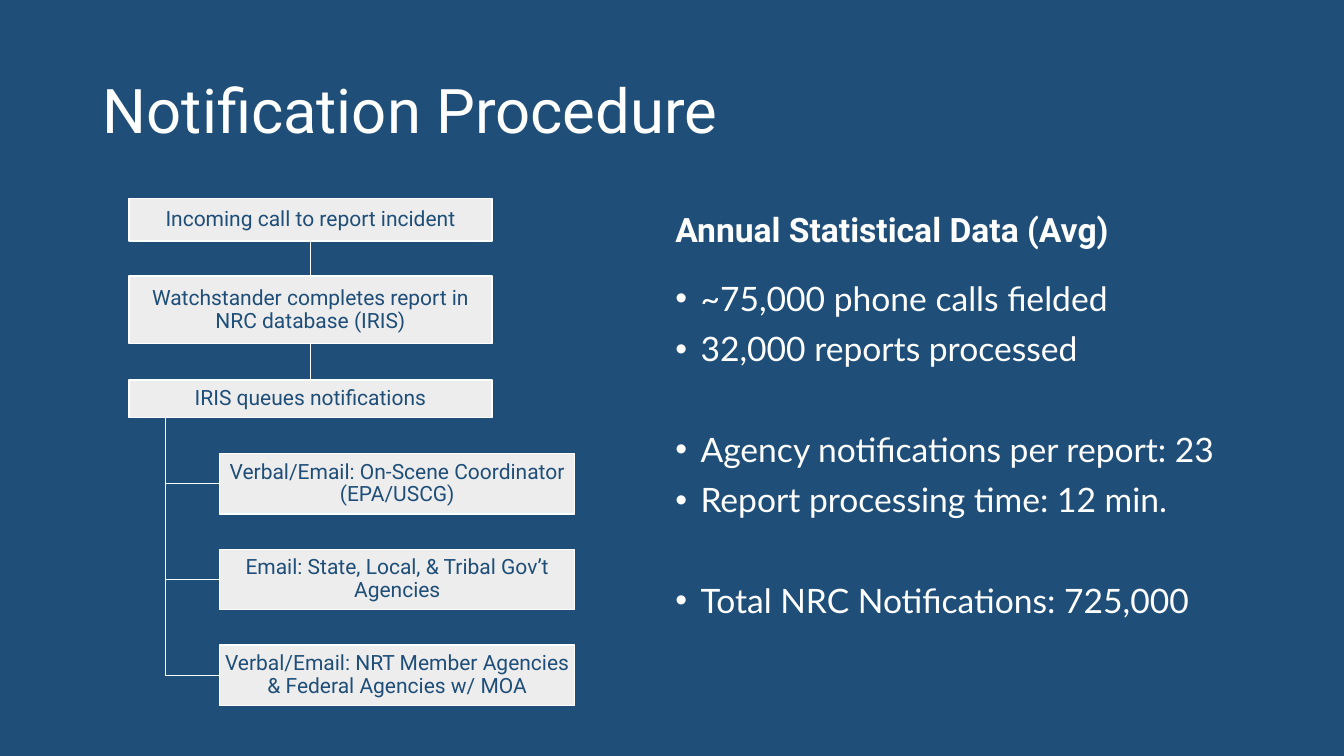
"""Build the Notification Procedure slide: a call-to-notification flow beside annual statistics."""
from lxml import etree
from pptx import Presentation
from pptx import util as u
from pptx.dml.color import RGBColor
from pptx.enum import shapes, text
from pptx.oxml.ns import qn

PX = 9144
NAVY = RGBColor(0x1F, 0x4E, 0x79)
WHITE = RGBColor(0xFF, 0xFF, 0xFF)
GREY = RGBColor(0xED, 0xED, 0xED)


def style(paragraph, font_name, size, color, alignment=text.PP_ALIGN.LEFT):
    paragraph.alignment = alignment
    paragraph.line_spacing = 0.9
    paragraph.font.name = font_name
    paragraph.font.size = u.Pt(size)
    paragraph.font.color.rgb = color


def outline(shape):
    shape.line.color.rgb = WHITE
    shape.line.width = u.Pt(1)


presentation = Presentation()
presentation.slide_width = 1333 * PX
presentation.slide_height = 750 * PX
slide = presentation.slides.add_slide(presentation.slide_layouts[5])
slide.background.fill.solid()
slide.background.fill.fore_color.rgb = NAVY

title = slide.shapes.title
title.left, title.top, title.width, title.height = 92 * PX, 40 * PX, 1150 * PX, 145 * PX
title.text_frame.text = "Notification Procedure"
title.text_frame.vertical_anchor = text.MSO_ANCHOR.MIDDLE
style(title.text_frame.paragraphs[0], "Roboto", 44, WHITE)

heading = slide.shapes.add_textbox(660 * PX, 185 * PX, 594 * PX, 90 * PX).text_frame
heading.word_wrap = True
heading.vertical_anchor = text.MSO_ANCHOR.MIDDLE
heading.text = "Annual Statistical Data (Avg)"
style(heading.paragraphs[0], "Roboto", 24, WHITE)
heading.paragraphs[0].font.bold = True
heading.paragraphs[0].space_before = u.Pt(10)

statistics = [
    ("~75,000 phone calls fielded", 10),
    ("32,000 reports processed", 10),
    ("Agency notifications per report: 23", 46),
    ("Report processing time: 12 min.", 10),
    ("Total NRC Notifications: 725,000", 46),
]
body = slide.shapes.add_textbox(660 * PX, 275 * PX, 594 * PX, 403 * PX).text_frame
body.word_wrap = True
body.text = "\n".join(statistic for statistic, _ in statistics)
for paragraph, (_, space_before) in zip(body.paragraphs, statistics):
    style(paragraph, "Lato", 24, WHITE)
    paragraph.space_before = u.Pt(space_before)
    properties = paragraph._p.get_or_add_pPr()
    properties.set("marL", str(25 * PX))
    properties.set("indent", str(-25 * PX))
    bullet_font = etree.Element(qn("a:buFont"), typeface="Arial")
    bullet = etree.Element(qn("a:buChar"), char="•")
    properties.find(qn("a:defRPr")).addprevious(bullet_font)
    bullet_font.addnext(bullet)

steps = [
    ("Incoming call to report incident", 128, 197, 360, 42),
    ("Watchstander completes report in NRC database (IRIS)", 128, 274, 360, 67),
    ("IRIS queues notifications", 128, 377, 360, 37),
]
notifications = [
    "Verbal/Email: On-Scene Coordinator (EPA/USCG)",
    "Email: State, Local, & Tribal Gov’t Agencies",
    "Verbal/Email: NRT Member Agencies & Federal Agencies w/ MOA",
]
branches = [(label, 218, 450 + 95 * row, 352, 60) for row, label in enumerate(notifications)]

for _, left, top, _, height in reversed(branches):
    builder = slide.shapes.build_freeform(164, 414, scale=PX)
    middle = top + height // 2
    builder.add_line_segments([(164, middle), (left, middle)], close=False)
    elbow = builder.convert_to_shape()
    elbow.fill.background()
    elbow.shadow.inherit = False
    outline(elbow)

boxes = []
for label, left, top, width, height in steps + branches:
    box = slide.shapes.add_shape(
        shapes.MSO_SHAPE.RECTANGLE, left * PX, top * PX, width * PX, height * PX)
    box.shadow.inherit = False
    box.fill.solid()
    box.fill.fore_color.rgb = GREY
    outline(box)
    frame = box.text_frame
    frame.margin_left = frame.margin_right = frame.margin_top = frame.margin_bottom = PX
    frame.word_wrap = True
    frame.vertical_anchor = text.MSO_ANCHOR.MIDDLE
    frame.text = label
    style(frame.paragraphs[0], "Roboto", 15, NAVY, text.PP_ALIGN.CENTER)
    boxes.append(box)

for upper, lower in zip(boxes[:2], boxes[1:3]):
    link = slide.shapes.add_connector(shapes.MSO_CONNECTOR.STRAIGHT, 0, 0, 0, 0)
    link.begin_connect(upper, 2)
    link.end_connect(lower, 0)
    outline(link)
    etree.SubElement(link._element.spPr, qn("a:effectLst"))

presentation.save("out.pptx")
